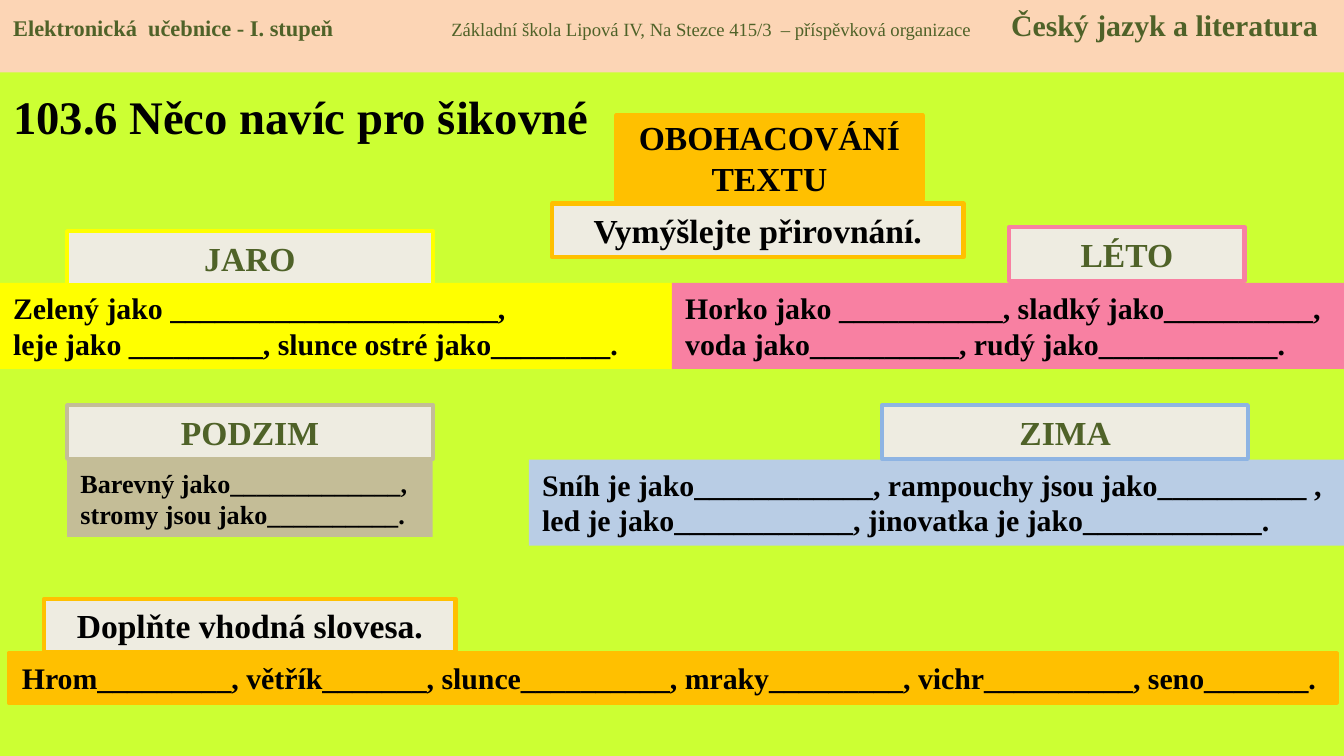
import pptx
import pptx.dml.color
import pptx.enum.shapes
import pptx.enum.text
import pptx.util
from dataclasses import dataclass
from lxml import etree

ALIGN = pptx.enum.text.PP_ALIGN
ANCHOR = pptx.enum.text.MSO_ANCHOR

# Grid: 100 columns by 56.25 rows (16:9), one cell is a tenth of an inch
COLS, ROWS, CELL = 100, 56.25, 0.1
LABEL_ROWS = 4
STRIP_ROWS = 6.4


@dataclass(frozen=True)
class Theme:
    font: str = "Times New Roman"
    lime: str = "CCFF33"
    peach: str = "FCD5B5"
    cream: str = "EEECE1"
    orange: str = "FFC000"
    yellow: str = "FFFF00"
    pink: str = "F880A2"
    tan: str = "C4BD97"
    ice: str = "B9CDE5"
    blue: str = "8EB4E3"
    ink: str = "000000"
    green: str = "4F6228"
    title: int = 25
    label: int = 18
    body: int = 16
    small: int = 14
    school: int = 10
    book: int = 12
    border: float = 2.25


T = Theme()


def grid(n):
    return pptx.util.Inches(n * CELL)


def rgb(value):
    return pptx.dml.color.RGBColor.from_string(value)


def add_run(p, text, size, color=T.ink, bold=True):
    r = p.add_run()
    r.text = text
    r.font.name = T.font
    r.font.size = pptx.util.Pt(size)
    r.font.bold = bold
    r.font.color.rgb = rgb(color)


def add_lines(tf, lines, size, color=T.ink, align=ALIGN.LEFT):
    for i, line in enumerate(lines):
        p = tf.add_paragraph() if i else tf.paragraphs[0]
        p.alignment = align
        add_run(p, line, size, color)


def add_box(s, col, row, cols, rows, fill, border=None, anchor=ANCHOR.TOP):
    """Draw a filled rectangle and return its text frame."""
    sp = s.shapes.add_shape(pptx.enum.shapes.MSO_SHAPE.RECTANGLE,
                            grid(col), grid(row), grid(cols), grid(rows))
    sp.shadow.inherit = False
    sp.fill.solid()
    sp.fill.fore_color.rgb = rgb(fill)
    if border:
        sp.line.color.rgb = rgb(border)
        sp.line.width = pptx.util.Pt(T.border)
    else:
        sp.line.fill.background()
    tf = sp.text_frame
    tf.word_wrap = True
    tf.vertical_anchor = anchor
    return tf


def add_label(s, col, row, cols, text, border, color=T.ink):
    tf = add_box(s, col, row, cols, LABEL_ROWS, T.cream, border)
    add_lines(tf, [text], T.label, color, ALIGN.CENTER)


def add_strip(s, col, row, cols, fill, lines, size=T.body, rows=STRIP_ROWS,
              border=None):
    add_lines(add_box(s, col, row, cols, rows, fill, border), lines, size)


def add_tabs(p, columns):
    pPr = p._p.get_or_add_pPr()
    tabs = etree.SubElement(pPr, pptx.oxml.ns.qn("a:tabLst"))
    for col in columns:
        etree.SubElement(tabs, pptx.oxml.ns.qn("a:tab"),
                         pos=str(grid(col)), algn="l")


def add_header(s):
    p = add_box(s, 0, 0, COLS, 5.4, T.peach).paragraphs[0]
    p.alignment = ALIGN.LEFT
    add_tabs(p, [32.6, 74.25])
    add_run(p, "Elektronická  učebnice - I. stupeň\t", T.book, T.green)
    add_run(p, "Základní škola Lipová IV, Na Stezce 415/3  – příspěvková organizace\t",
            T.school, T.green, bold=False)
    add_run(p, "Český jazyk a literatura", T.body, T.green)


def add_title(s, text):
    tf = s.shapes.add_textbox(0, grid(5.4), grid(46.9), grid(6.5)).text_frame
    tf.word_wrap = True
    tf.vertical_anchor = ANCHOR.MIDDLE
    add_lines(tf, [text], T.title)


def main():
    prs = pptx.Presentation()
    prs.slide_width, prs.slide_height = grid(COLS), grid(ROWS)
    s = prs.slides.add_slide(prs.slide_layouts[6])
    s.background.fill.solid()
    s.background.fill.fore_color.rgb = rgb(T.lime)

    # Header and title
    add_title(s, "103.6 Něco navíc pro šikovné")
    add_header(s)

    # First task
    add_label(s, 41.1, 15.15, 30.6, "Vymýšlejte přirovnání.", T.orange)

    # Sentence for autumn, then the topic
    add_strip(s, 5, 34.25, 27.2, T.tan,
              ["Barevný jako_____________,",
               "stromy jsou jako__________."], T.small, 5.7)
    topic = add_box(s, 45.85, 8.6, 22.8, 6.25, T.orange, T.orange, ANCHOR.MIDDLE)
    add_lines(topic, ["OBOHACOVÁNÍ TEXTU"], T.label, align=ALIGN.CENTER)

    # Sentences for winter, spring and summer
    half = COLS / 2
    add_strip(s, 39.35, 34.2, COLS - 39.35, T.ice,
              ["Sníh je jako____________, rampouchy jsou jako__________ ,",
               "led je jako____________, jinovatka je jako____________."])
    add_strip(s, 0, 21.05, half, T.yellow,
              ["Zelený jako ______________________,",
               "leje jako _________, slunce ostré jako________."])
    add_strip(s, half, 21.05, half, T.pink,
              ["Horko jako ___________, sladký jako__________,",
               "voda jako__________, rudý jako____________."])

    # Season names
    for col, row, cols, name, border in (
            (5, 30.15, 27.2, "PODZIM", T.tan),
            (65.65, 30.15, 27.2, "ZIMA", T.blue),
            (5, 17.2, 27.2, "JARO", T.yellow),
            (75.1, 16.9, 17.5, "LÉTO", T.pink)):
        add_label(s, col, row, cols, name, border, T.green)

    # Second task
    add_label(s, 3.3, 44.55, 30.6, "Doplňte vhodná slovesa.", T.orange)
    add_strip(s, 0.65, 48.6, 98.8, T.orange,
              ["Hrom_________, větřík_______, slunce__________, "
               "mraky_________, vichr__________, seno_______."],
              rows=3.7, border=T.orange)

    prs.save("out.pptx")


if __name__ == "__main__":
    main()
